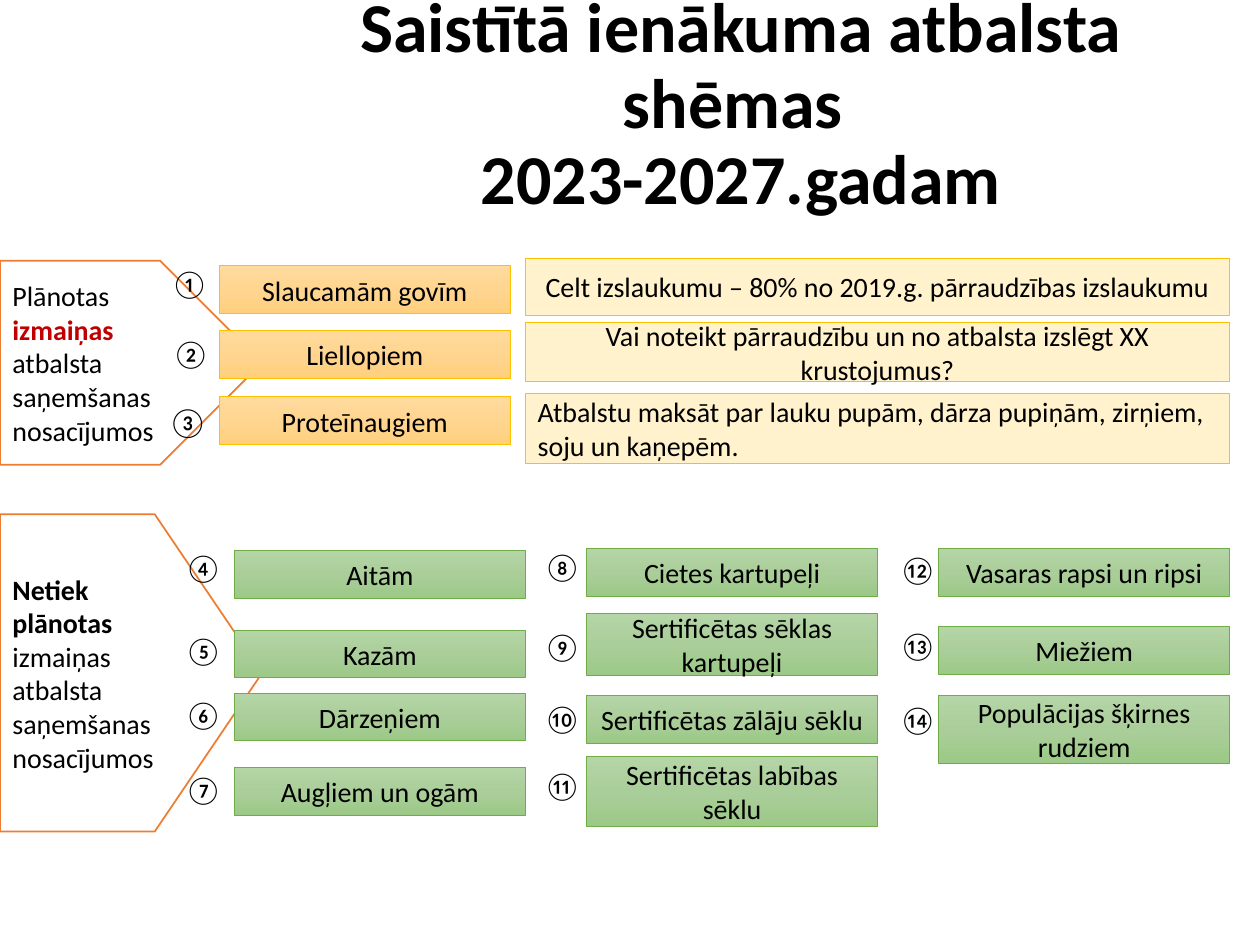
from copy import deepcopy

from pptx import Presentation
from pptx.dml.color import RGBColor
from pptx.enum.shapes import MSO_SHAPE
from pptx.enum.text import MSO_ANCHOR, MSO_AUTO_SIZE, PP_ALIGN
from pptx.oxml.ns import qn
from pptx.util import Pt

ORANGE = ("FFDB9E", "FFD590", "FFD07C")
GREEN = ("B5D5A7", "AACE9A", "9CC987")
BOX_WIDTH, BOX_HEIGHT = 166.3, 27.4


def color(value):
    return RGBColor.from_string(value)


class SlideBuilder:
    font = "Calibri"
    size = 16
    ink = "000000"

    def __init__(self, page):
        self.page = page

    def set_text(self, frame, lines, align, size=None, font=None, bold=(), accents=()):
        frame.text = "\n".join(lines)
        for para in frame.paragraphs:
            para.alignment = align
            for span in para.runs:
                span.font.name = font or self.font
                span.font.size = Pt(size or self.size)
                span.font.bold = span.text in bold
                span.font.color.rgb = color("C00000" if span.text in accents else self.ink)

    def title(self, left, top, width, height, lines):
        frame = self.page.shapes.add_textbox(Pt(left), Pt(top), Pt(width), Pt(height)).text_frame
        frame.word_wrap = True
        frame.vertical_anchor = MSO_ANCHOR.MIDDLE
        frame.margin_left = frame.margin_right = Pt(5)
        frame.margin_top = frame.margin_bottom = Pt(2.9)
        self.set_text(frame, lines, PP_ALIGN.CENTER, size=40, bold=lines)
        for para in frame.paragraphs:
            para.line_spacing = 0.9

    def shape(self, kind, left, top, width, height, line, line_width):
        shape = self.page.shapes.add_shape(kind, Pt(left), Pt(top), Pt(width), Pt(height))
        shape.shadow.inherit = False
        shape.line.color.rgb = color(line)
        shape.line.width = Pt(line_width)
        shape.text_frame.word_wrap = True
        shape.text_frame.vertical_anchor = MSO_ANCHOR.MIDDLE
        return shape

    def pentagon(self, top, height, point, lines, bold, accents=()):
        shape = self.shape(MSO_SHAPE.PENTAGON, 0, top, 149.8, height, "ED7D31", 1)
        shape.adjustments[0] = point
        shape.fill.solid()
        shape.fill.fore_color.rgb = color("FFFFFF")
        self.set_text(shape.text_frame, lines, PP_ALIGN.LEFT, bold=bold, accents=accents)

    def scheme(self, left, top, text, stops, line, height=BOX_HEIGHT):
        shape = self.shape(MSO_SHAPE.RECTANGLE, left, top, BOX_WIDTH, height, line, 0.5)
        shape.fill.gradient()
        shape.fill.gradient_angle = 270
        stop_list = shape._element.spPr.find(qn("a:gradFill")).find(qn("a:gsLst"))
        stop_list.append(deepcopy(stop_list[0]))
        for stop, position, value in zip(shape.fill.gradient_stops, (0, 0.5, 1), stops):
            stop.position = position
            stop.color.rgb = color(value)
        self.set_text(shape.text_frame, [text], PP_ALIGN.CENTER)

    def condition(self, top, height, text, align):
        shape = self.shape(MSO_SHAPE.RECTANGLE, 300.2, top, 402.5, height, "FFC000", 0.5)
        shape.fill.solid()
        shape.fill.fore_color.rgb = color("FFF2CC")
        self.set_text(shape.text_frame, [text], align)

    def number(self, left, top, text, width=36, wrap=False, font=None):
        box = self.page.shapes.add_textbox(Pt(left), Pt(top), Pt(width), Pt(26.6))
        box.text_frame.word_wrap = wrap
        box.text_frame.auto_size = MSO_AUTO_SIZE.SHAPE_TO_FIT_TEXT
        self.set_text(box.text_frame, [text], PP_ALIGN.LEFT, font=font)


def main():
    deck = Presentation()
    deck.slide_width, deck.slide_height = Pt(720), Pt(540)
    builder = SlideBuilder(deck.slides.add_slide(deck.slide_layouts[6]))

    builder.title(144, 20.9, 558.7, 79.2, ["Saistītā ienākuma atbalsta shēmas ", "2023-2027.gadam"])

    ending = ["atbalsta", "saņemšanas", "nosacījumos"]
    builder.pentagon(149, 116.6, 0.5, ["Plānotas", "izmaiņas"] + ending, ["izmaiņas"], ["izmaiņas"])
    builder.pentagon(293.8, 181.4, 0.41, ["Netiek", "plānotas", "izmaiņas"] + ending, ["Netiek", "plānotas"])

    for top, text in ((151.9, "Slaucamām govīm"), (188.6, "Liellopiem"), (226.8, "Proteīnaugiem")):
        builder.scheme(125.3, top, text, ORANGE, "FFC000")

    conditions = (
        (147.6, 32.4, "Celt izslaukumu – 80% no 2019.g. pārraudzības izslaukumu", PP_ALIGN.CENTER),
        (184.3, 33.8, "Vai noteikt pārraudzību un no atbalsta izslēgt XX krustojumus?", PP_ALIGN.CENTER),
        (224.6, 40.3, "Atbalstu maksāt par lauku pupām, dārza pupiņām, zirņiem, soju un kaņepēm.", PP_ALIGN.LEFT),
    )
    for condition in conditions:
        builder.condition(*condition)

    builder.number(90.7, 149, "①", width=27.4, wrap=True)
    builder.number(91.4, 188.6, "②")
    builder.number(91.4, 228.2, "③", width=41.8, wrap=True, font="Lato")

    columns = (
        (98.6, 133.9, (
            ("④", 311, 314.6, BOX_HEIGHT, "Aitām"),
            ("⑤", 358.6, 360, BOX_HEIGHT, "Kazām"),
            ("⑥", 395.3, 396, BOX_HEIGHT, "Dārzeņiem"),
            ("⑦", 437.8, 438.5, BOX_HEIGHT, "Augļiem un ogām"),
        )),
        (303.8, 335.2, (
            ("⑧", 310.3, 313.2, BOX_HEIGHT, "Cietes kartupeļi"),
            ("⑨", 356.4, 350.6, 35.3, "Sertificētas sēklas kartupeļi"),
            ("⑩", 397.4, 397.4, BOX_HEIGHT, "Sertificētas zālāju sēklu"),
            ("⑪", 435.6, 432, 40.3, "Sertificētas labības sēklu"),
        )),
        (506.9, 536.4, (
            ("⑫", 312.5, 313.2, BOX_HEIGHT, "Vasaras rapsi un ripsi"),
            ("⑬", 355.7, 357.8, BOX_HEIGHT, "Miežiem"),
            ("⑭", 398.2, 397.4, 38.9, "Populācijas šķirnes rudziem"),
        )),
    )
    for number_left, box_left, schemes in columns:
        for number, number_top, top, height, text in schemes:
            builder.scheme(box_left, top, text, GREEN, "70AD47", height)
            builder.number(number_left, number_top, number)

    deck.save("out.pptx")


if __name__ == "__main__":
    main()
